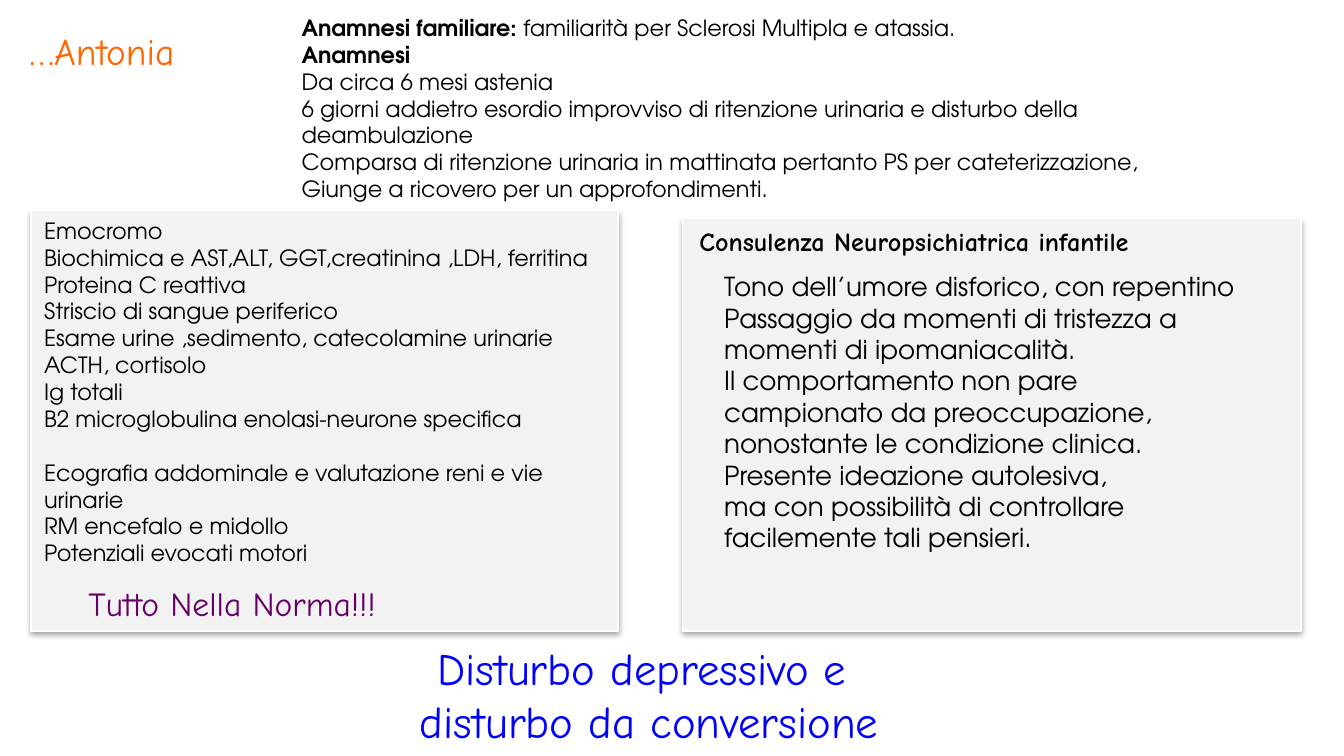
"""Build the clinical case slide: history, tests, psychiatric consultation and diagnosis."""
from pptx import Presentation
from pptx.dml.color import RGBColor
from pptx.enum.shapes import MSO_SHAPE as SHAPE
from pptx.enum.text import PP_ALIGN as ALIGN
from pptx.oxml import parse_xml
from pptx.oxml.ns import nsdecls
from pptx.util import Emu, Pt

PX = 4572
HAND, SANS = "Comic Neue", "TeX Gyre Adventor"
SHADOW = (
    f'<a:outerShdw {nsdecls("a")} blurRad="{Pt(3.1)}" dist="{Pt(1.8)}" dir="5400000" rotWithShape="0">'
    '<a:srgbClr val="000000"><a:alpha val="35000"/></a:srgbClr></a:outerShdw>'
)


def color(value):
    return RGBColor.from_string(value)


def add_text(box, paragraphs, font=SANS, size=12, ink="000000", align=ALIGN.LEFT, gap_before=None):
    frame = slide.shapes.add_textbox(*[Emu(v * PX) for v in box]).text_frame
    frame.word_wrap = True
    for index, parts in enumerate(paragraphs):
        paragraph = frame.paragraphs[0] if index == 0 else frame.add_paragraph()
        paragraph.alignment = align
        if index == gap_before:
            paragraph.space_before = Pt(size * 1.2)
        bold_part, plain_part = ("", parts) if isinstance(parts, str) else parts
        for words, bold in ((bold_part, True), (plain_part, False)):
            if words:
                run = paragraph.add_run()
                run.text = words
                run.font.name, run.font.size, run.font.bold = font, Pt(size), bold
                run.font.color.rgb = color(ink)


deck = Presentation()
deck.slide_width, deck.slide_height = Emu(2000 * PX), Emu(1125 * PX)
slide = deck.slides.add_slide(deck.slide_layouts[6])

for panel_box in ((46, 313, 874, 626), (1016, 325, 920, 614)):
    panel = slide.shapes.add_shape(SHAPE.RECTANGLE, *[Emu(v * PX) for v in panel_box])
    panel.fill.solid()
    panel.fill.fore_color.rgb = color("F2F2F2")
    panel.line.color.rgb = color("FFFFFF")
    panel.line.width = Pt(0.75)
    panel.shadow.inherit = False
    panel.element.spPr.find("{*}effectLst").append(parse_xml(SHADOW))

add_text((24, 32, 344, 88), ["…Antonia"], font=HAND, size=20, ink="FF6600")

add_text((46, 313, 908, 546), [
    "Emocromo",
    "Biochimica e AST,ALT, GGT,creatinina ,LDH, ferritina",
    "Proteina C reattiva",
    "Striscio di sangue periferico",
    "Esame urine ,sedimento, catecolamine urinarie",
    "ACTH, cortisolo",
    "Ig totali",
    "B2 microglobulina enolasi-neurone specifica",
    "Ecografia addominale e valutazione reni e vie urinarie",
    "RM encefalo e midollo",
    "Potenziali evocati motori",
], gap_before=8)

add_text((112, 858, 704, 80), ["Tutto Nella Norma!!!"], font=HAND, size=18, ink="660066")

add_text((1021, 325, 922, 68), [("Consulenza Neuropsichiatrica infantile", "")], font=HAND, size=14)

add_text((1058, 393, 808, 538), [
    "Tono dell’umore disforico, con repentino",
    "Passaggio da momenti di tristezza a",
    "momenti di ipomaniacalità.",
    "Il comportamento non pare",
    "campionato da preoccupazione,",
    "nonostante le condizione clinica.",
    "Presente ideazione autolesiva,",
    "ma con possibilità di controllare",
    "facilemente tali pensieri.",
], size=14)

add_text((217, 943, 1498, 182), ["Disturbo depressivo e ", "disturbo da conversione"],
         font=HAND, size=24, ink="0000FF", align=ALIGN.CENTER)

add_text((429, 11, 1376, 384), [
    ("Anamnesi familiare: ", "familiarità per Sclerosi Multipla e atassia."),
    ("Anamnesi", ""),
    "Da circa 6 mesi astenia",
    "6 giorni addietro esordio improvviso di ritenzione urinaria e disturbo della deambulazione",
    "Comparsa di ritenzione urinaria in mattinata pertanto PS per cateterizzazione,",
    "Giunge a ricovero per un approfondimenti.",
])

deck.save("out.pptx")
